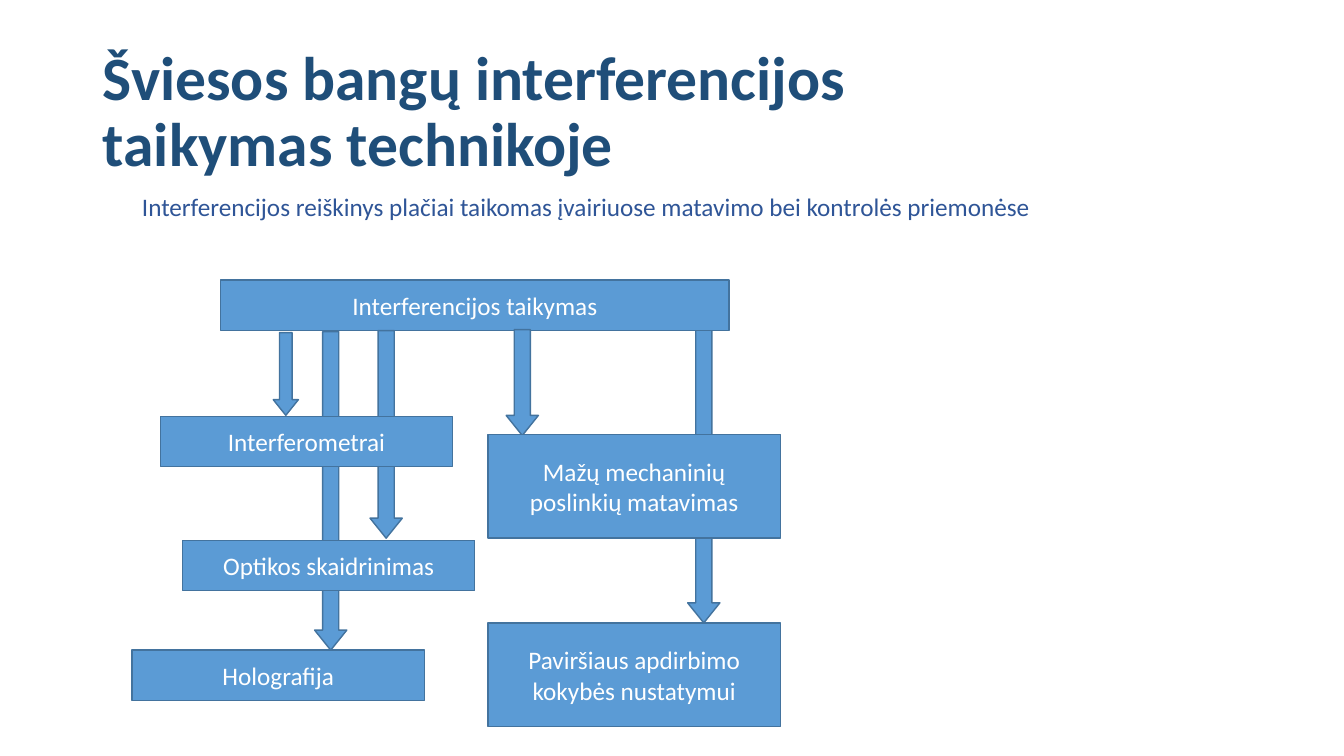
"""Build a slide on the technical uses of light interference."""
from pptx import Presentation
from pptx.dml.color import RGBColor
from pptx.enum.shapes import MSO_SHAPE
from pptx.enum.text import MSO_ANCHOR, MSO_AUTO_SIZE, PP_ALIGN
from pptx.util import Pt

PX = 9144
FONT = "Calibri"
NAVY = RGBColor(0x1F, 0x4E, 0x79)
INDIGO = RGBColor(0x2F, 0x55, 0x97)
BLUE = RGBColor(0x5B, 0x9B, 0xD5)
EDGE = RGBColor(0x43, 0x73, 0x9E)
WHITE = RGBColor(0xFF, 0xFF, 0xFF)


def add_run(p, text, size, color, bold=False):
    r = p.add_run()
    r.text = text
    r.font.name = FONT
    r.font.size = Pt(size)
    r.font.bold = bold
    r.font.color.rgb = color


def add_block(kind, x, y, w, h):
    sp = s.shapes.add_shape(kind, x * PX, y * PX, w * PX, h * PX)
    sp.shadow.inherit = False
    sp.fill.solid()
    sp.fill.fore_color.rgb = BLUE
    sp.line.color.rgb = EDGE
    sp.line.width = Pt(1)
    return sp


prs = Presentation()
prs.slide_width = 1333 * PX
prs.slide_height = 750 * PX
s = prs.slides.add_slide(prs.slide_layouts[5])

title = s.shapes.title
title.left, title.top, title.width, title.height = 92 * PX, 40 * PX, 821 * PX, 145 * PX
tf = title.text_frame
tf.word_wrap = True
tf.auto_size = MSO_AUTO_SIZE.NONE
tf.vertical_anchor = MSO_ANCHOR.MIDDLE
p = tf.paragraphs[0]
p.alignment = PP_ALIGN.LEFT
p.line_spacing = 0.9
add_run(p, "Šviesos bangų interferencijos taikymas technikoje", 44, NAVY, True)

intro = s.shapes.add_textbox(131 * PX, 185 * PX, 916 * PX, 40 * PX)
tf = intro.text_frame
tf.word_wrap = False
tf.auto_size = MSO_AUTO_SIZE.SHAPE_TO_FIT_TEXT
add_run(
    tf.paragraphs[0],
    "Interferencijos reiškinys plačiai taikomas įvairiuose matavimo bei kontrolės priemonėse",
    18,
    INDIGO,
)

root = [("Interferencijos taikymas", 219, 278, 504, 50)]
uses = [
    ("Interferometrai", 159, 413, 290, 50),
    ("Optikos skaidrinimas", 181, 536, 290, 50),
    ("Mažų mechaninių poslinkių matavimas", 484, 431, 290, 103),
    ("Paviršiaus apdirbimo kokybės nustatymui", 484, 618, 290, 103),
    ("Holografija", 131, 645, 290, 50),
]
long_arrows = [(312, 329, 32, 316), (682, 325, 32, 293)]
short_arrows = [(271, 330, 25, 82), (367, 328, 32, 206), (502, 327, 32, 105)]

for arrows, boxes in ((long_arrows, root), (short_arrows, uses)):
    for place in arrows:
        sp = add_block(MSO_SHAPE.DOWN_ARROW, *place)
        sp.adjustments[0] = 0.5
        sp.adjustments[1] = 0.62
    for text, *place in boxes:
        tf = add_block(MSO_SHAPE.RECTANGLE, *place).text_frame
        tf.word_wrap = True
        tf.vertical_anchor = MSO_ANCHOR.MIDDLE
        p = tf.paragraphs[0]
        p.alignment = PP_ALIGN.CENTER
        add_run(p, text, 18, WHITE)

prs.save("out.pptx")
